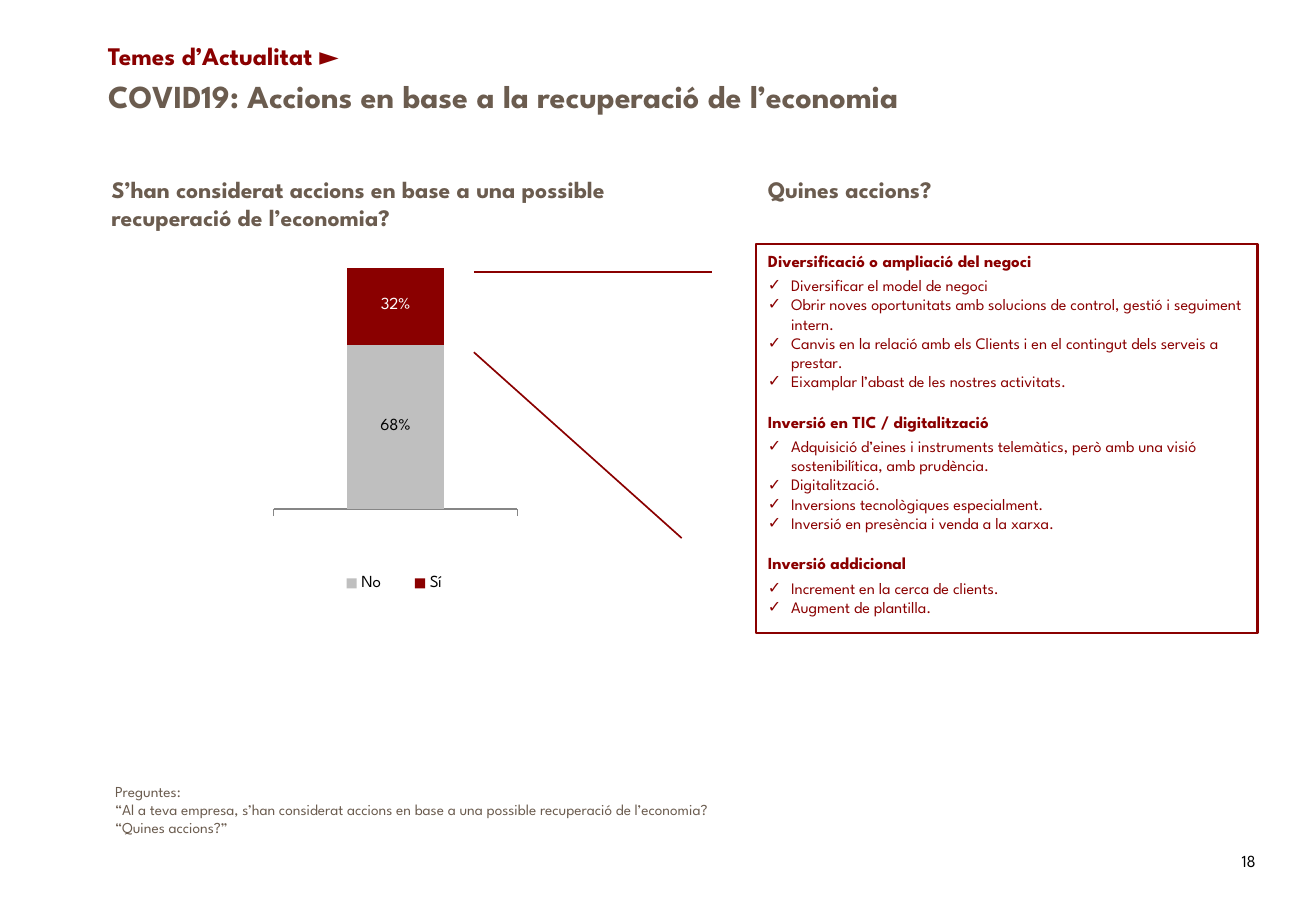
from dataclasses import dataclass

from lxml import etree
from pptx import Presentation
from pptx.chart.data import CategoryChartData
from pptx.dml.color import RGBColor
from pptx.enum.chart import XL_CHART_TYPE as ChartType, XL_LABEL_POSITION as LabelPosition
from pptx.enum.chart import XL_LEGEND_POSITION as LegendPosition, XL_TICK_LABEL_POSITION as TickLabels
from pptx.enum.shapes import MSO_CONNECTOR as Connector
from pptx.enum.text import MSO_ANCHOR as Anchor, MSO_AUTO_SIZE as AutoSize, PP_ALIGN as Align
from pptx.oxml import parse_xml
from pptx.oxml.ns import nsdecls, qn
from pptx.util import Emu, Pt

EMU_PER_PX = 9144
FONT = "League Spartan"
RED, BROWN, BLACK, WHITE, GREY, AXIS = "8A0000", "6B5C4F", "000000", "FFFFFF", "BFBFBF", "868686"


@dataclass(frozen=True)
class Box:
    left: int
    top: int
    width: int
    height: int


@dataclass(frozen=True)
class Label:
    box: Box
    lines: tuple[str, ...]
    size: float
    color: str
    bold: bool = False
    anchor: Anchor = Anchor.TOP


@dataclass(frozen=True)
class ActionGroup:
    heading: str
    actions: tuple[str, ...]


@dataclass(frozen=True)
class Answer:
    name: str
    share: float
    color: str
    label_color: str


TITLE = Label(Box(79, 63, 904, 31), ("COVID19: Accions en base a la recuperació de l’economia",),
              19, BROWN, True, Anchor.MIDDLE)
LABELS = (
    Label(Box(79, 28, 956, 36), ("Temes d’Actualitat ►",), 15, RED, True, Anchor.MIDDLE),
    Label(Box(82, 139, 479, 57),
          ("S’han considerat accions en base a una possible recuperació de l’economia?",), 14, BROWN, True),
    Label(Box(622, 139, 479, 34), ("Quines accions?",), 14, BROWN, True),
    Label(Box(85, 639, 957, 56), (
        "Preguntes:",
        "“Al a teva empresa, s’han considerat accions en base a una possible recuperació de l’economia?",
        "“Quines accions?”"), 9, BROWN),
    Label(Box(1012, 695, 67, 40), ("18",), 10, BLACK),
)
GROUPS = (
    ActionGroup("Diversificació o ampliació del negoci", (
        "Diversificar el model de negoci",
        "Obrir noves oportunitats amb solucions de control, gestió i seguiment intern.",
        "Canvis en la relació amb els Clients i en el contingut dels serveis a prestar.",
        "Eixamplar l’abast de les nostres activitats.")),
    ActionGroup("Inversió en TIC / digitalització", (
        "Adquisició d’eines i instruments telemàtics, però amb una visió sostenibilítica, amb prudència.",
        "Digitalització.",
        "Inversions tecnològiques especialment.",
        "Inversió en presència i venda a la xarxa.")),
    ActionGroup("Inversió addicional", ("Increment en la cerca de clients.", "Augment de plantilla.")),
)
ANSWERS = (Answer("No", 0.68, GREY, BLACK), Answer("Sí", 0.32, RED, WHITE))
CALLOUT_LINES = ((390, 224, 586, 224), (390, 290, 561, 443))


def px(value: int) -> Emu:
    return Emu(value * EMU_PER_PX)


def rgb(color: str) -> RGBColor:
    return RGBColor.from_string(color)


def place(shape, box: Box) -> None:
    shape.left, shape.top = px(box.left), px(box.top)
    shape.width, shape.height = px(box.width), px(box.height)


def format_font(font, size: float, color: str, bold: bool = False) -> None:
    font.name, font.size, font.bold = FONT, Pt(size), bold
    font.color.rgb = rgb(color)


def write_label(shape, label: Label) -> None:
    place(shape, label.box)
    frame = shape.text_frame
    frame.text = "\n".join(label.lines)
    frame.word_wrap, frame.auto_size = True, AutoSize.NONE
    frame.vertical_anchor = label.anchor
    for paragraph in frame.paragraphs:
        paragraph.alignment = Align.LEFT
        for run in paragraph.runs:
            format_font(run.font, label.size, label.color, label.bold)


def set_bullet(paragraph, character: str = "") -> None:
    properties = paragraph._p.get_or_add_pPr()
    indent = px(19) if character else 0
    properties.set("marL", str(indent))
    properties.set("indent", str(-indent))
    if character:
        etree.SubElement(properties, qn("a:buChar")).set("char", character)
    else:
        etree.SubElement(properties, qn("a:buNone"))


def write_actions(body, groups: tuple[ActionGroup, ...]) -> None:
    place(body, Box(622, 201, 413, 320))
    body.line.color.rgb = rgb(RED)
    body.line.width = Pt(1.5)
    frame = body.text_frame
    frame.word_wrap, frame.auto_size = True, AutoSize.NONE
    frame.vertical_anchor = Anchor.TOP
    entries = [(text, text == group.heading) for group in groups for text in (group.heading, *group.actions)]
    frame.text = "\n".join(text for text, _ in entries)
    for index, (paragraph, (_, heading)) in enumerate(zip(frame.paragraphs, entries)):
        paragraph.space_before = Pt(12 if heading and index else 0)
        paragraph.space_after = Pt(3 if heading else 0)
        set_bullet(paragraph, "" if heading else "✓")
        format_font(paragraph.runs[0].font, 10 if heading else 9.5, RED, heading)


def layout_xml(x: float, y: float, width: float, height: float, target: str = ""):
    return parse_xml(
        f'<c:layout {nsdecls("c")}><c:manualLayout>{target}'
        '<c:xMode val="edge"/><c:yMode val="edge"/>'
        f'<c:x val="{x}"/><c:y val="{y}"/><c:w val="{width}"/><c:h val="{height}"/>'
        '</c:manualLayout></c:layout>')


def add_answer_chart(slide, box: Box, answers: tuple[Answer, ...]) -> None:
    data = CategoryChartData(number_format="0%")
    data.categories = [" "]
    for answer in answers:
        data.add_series(answer.name, [answer.share])
    chart = slide.shapes.add_chart(ChartType.COLUMN_STACKED_100, px(box.left), px(box.top),
                                   px(box.width), px(box.height), data).chart
    format_font(chart.font, 10, BLACK)
    chart.has_title = False
    chart.has_legend = True
    chart.legend.position = LegendPosition.BOTTOM
    chart.legend.include_in_layout = False
    chart.legend._element.find(qn("c:legendPos")).addnext(layout_xml(0.24, 0.86, 0.55, 0.08))
    value_axis, category_axis = chart.value_axis, chart.category_axis
    value_axis.minimum_scale, value_axis.maximum_scale = 0, 1
    value_axis.has_major_gridlines = False
    value_axis.visible = False
    category_axis.tick_label_position = TickLabels.LOW
    category_axis.format.line.color.rgb = rgb(AXIS)
    plot = chart.plots[0]
    plot.gap_width, plot.overlap, plot.vary_by_categories = 150, 100, False
    for series, answer in zip(plot.series, answers):
        series.format.fill.solid()
        series.format.fill.fore_color.rgb = rgb(answer.color)
        labels = series.data_labels
        labels.show_value = True
        labels.number_format, labels.number_format_is_linked = "0%", False
        labels.position = LabelPosition.CENTER
        format_font(labels.font, 10, answer.label_color)
    plot_area = chart._chartSpace.chart.plotArea
    for layout in plot_area.findall(qn("c:layout")):
        plot_area.remove(layout)
    plot_area.insert(0, layout_xml(0.08, 0.05, 0.88, 0.65, '<c:layoutTarget val="inner"/>'))


def add_callout_line(slide, ends: tuple[int, int, int, int]) -> None:
    line = slide.shapes.add_connector(Connector.STRAIGHT, *map(px, ends))
    line.line.color.rgb = rgb(RED)
    line.line.width = Pt(1)
    etree.SubElement(line._element.spPr, qn("a:effectLst"))


def main() -> None:
    presentation = Presentation()
    presentation.slide_width, presentation.slide_height = px(1083), px(750)
    slide = presentation.slides.add_slide(presentation.slide_layouts[1])
    write_label(slide.shapes.title, TITLE)
    write_actions(slide.placeholders[1], GROUPS)
    for label in LABELS:
        write_label(slide.shapes.add_textbox(0, 0, 0, 0), label)
    add_answer_chart(slide, Box(207, 205, 228, 306), ANSWERS)
    for ends in CALLOUT_LINES:
        add_callout_line(slide, ends)
    presentation.save("out.pptx")


if __name__ == "__main__":
    main()
